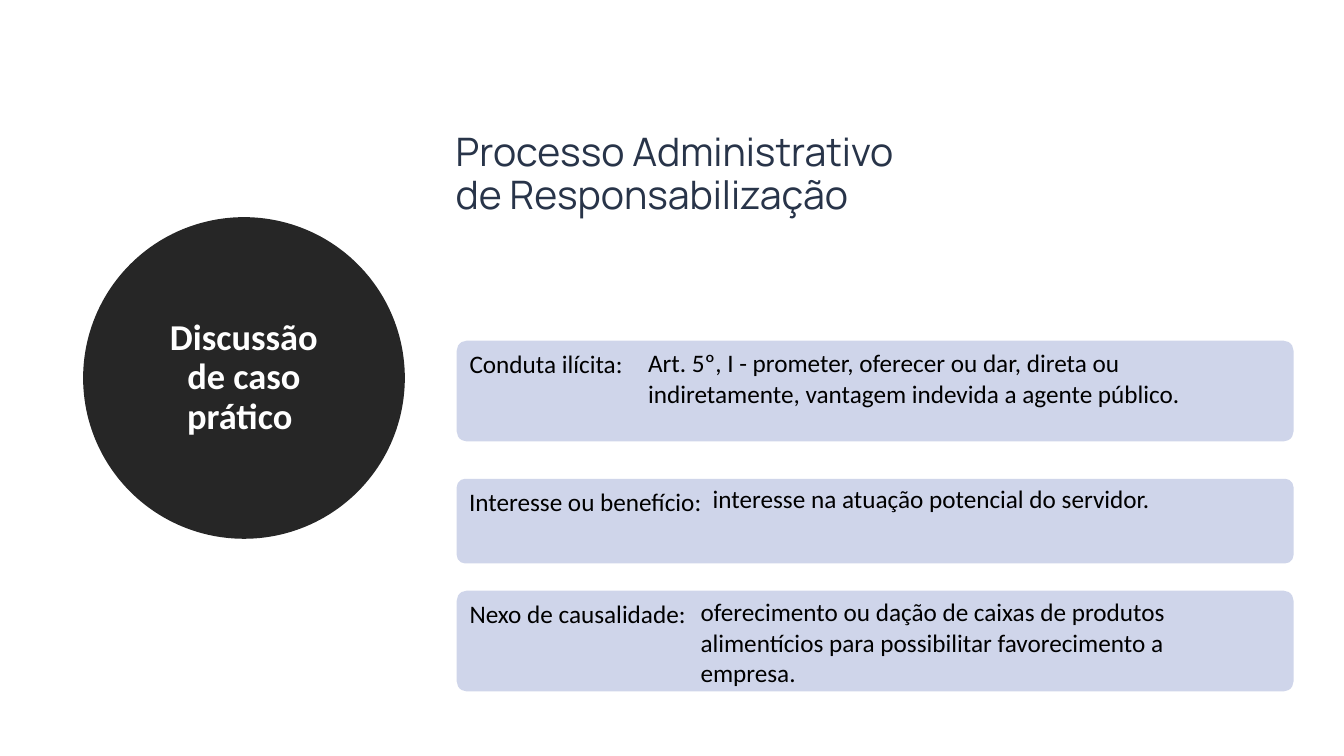
from pptx import Presentation
from pptx.dml.color import RGBColor
from pptx.enum.shapes import MSO_SHAPE
from pptx.enum.text import MSO_ANCHOR, MSO_AUTO_SIZE, PP_ALIGN
from pptx.util import Emu, Pt

PX = 9144
COLORS = {
    "circle": "262626",
    "card": "CFD5EA",
    "title": "283449",
    "text": "000000",
    "white": "FFFFFF",
}


def px(*lengths):
    return [Emu(length * PX) for length in lengths]


def write(box, text, size=18, font="Calibri", color="text", bold=False,
          align=PP_ALIGN.LEFT, anchor=MSO_ANCHOR.TOP, spacing=1.0, after=0):
    frame = box.text_frame
    frame.word_wrap = True
    frame.auto_size = MSO_AUTO_SIZE.NONE
    frame.vertical_anchor = anchor
    para = frame.paragraphs[0]
    para.alignment = align
    para.line_spacing = spacing
    para.space_before = Pt(0)
    para.space_after = Pt(after)
    span = para.add_run()
    span.text = text
    span.font.name = font
    span.font.size = Pt(size)
    span.font.bold = bold
    span.font.color.rgb = RGBColor.from_string(COLORS[color])


deck = Presentation()
deck.slide_width, deck.slide_height = px(1333, 750)
page = deck.slides.add_slide(deck.slide_layouts[5])

circle = page.shapes.add_shape(MSO_SHAPE.OVAL, *px(92, 225, 300, 300))
circle.shadow.inherit = False
circle.fill.solid()
circle.fill.fore_color.rgb = RGBColor.from_string(COLORS["circle"])
circle.line.color.rgb = RGBColor.from_string(COLORS["circle"])
circle.line.width = Pt(13.75)
circle.text_frame.margin_left, circle.text_frame.margin_right = px(15, 15)
write(circle, "Discussão de caso prático ", size=26, color="white", bold=True,
      align=PP_ALIGN.CENTER, anchor=MSO_ANCHOR.MIDDLE, spacing=0.9, after=6)

title = page.shapes.title
title.left, title.top, title.width, title.height = px(442, 127, 486, 147)
write(title, "Processo Administrativo de Responsabilização", size=28,
      font="Manrope", color="title", spacing=0.9, after=6)

cards = [
    ("Conduta ilícita:", (338, 100),
     "Art. 5º, I - prometer, oferecer ou dar, direta ou indiretamente, "
     "vantagem indevida a agente público.", (633, 340, 609, 71)),
    ("Interesse ou benefício:", (475, 84),
     "interesse na atuação potencial do servidor.", (697, 475, 516, 40)),
    ("Nexo de causalidade:", (586, 100),
     "oferecimento ou dação de caixas de produtos alimentícios para "
     "possibilitar favorecimento a empresa.", (685, 587, 547, 101)),
]
for label, (top, height), detail, detail_area in cards:
    card = page.shapes.add_shape(MSO_SHAPE.ROUNDED_RECTANGLE,
                                 *px(453, top, 830, height))
    card.adjustments[0] = 0.1
    card.shadow.inherit = False
    card.fill.solid()
    card.fill.fore_color.rgb = RGBColor.from_string(COLORS["card"])
    card.line.fill.background()
    write(card, label)
    write(page.shapes.add_textbox(*px(*detail_area)), detail)

deck.save("out.pptx")
